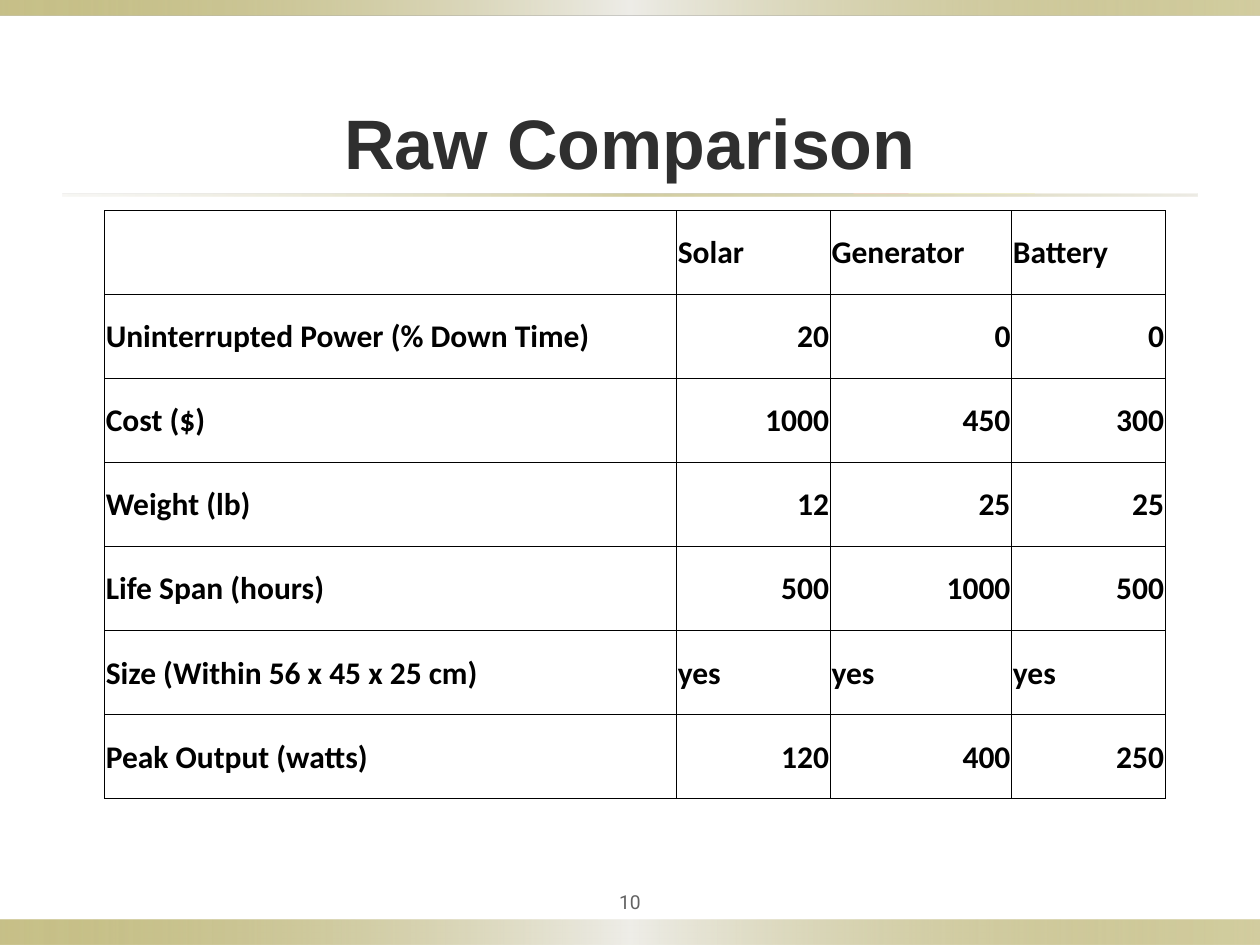
import lxml.etree
import pptx
import pptx.dml.color
import pptx.enum.shapes
import pptx.enum.text
import pptx.oxml.ns
import pptx.util

RGBColor = pptx.dml.color.RGBColor
ALIGN = pptx.enum.text.PP_ALIGN
ANCHOR = pptx.enum.text.MSO_ANCHOR
qn = pptx.oxml.ns.qn

OLIVE = RGBColor(0x91, 0x84, 0x15)
PEARL = RGBColor(0xEE, 0xED, 0xE8)
SAND = RGBColor(0xDC, 0xD9, 0xCC)
CHARCOAL = RGBColor(0x2F, 0x2F, 0x2F)
GREY = RGBColor(0x63, 0x63, 0x63)
BLACK = RGBColor(0, 0, 0)

UNIT = pptx.util.Inches(0.1)
GRID_COLUMNS, GRID_ROWS = 100, 75

BAND_STOPS = [(0, OLIVE, 50), (50, PEARL, 100), (100, OLIVE, 40)]
RULE_STOPS = [(0, SAND, 20), (50, OLIVE, 40), (100, SAND, 50)]

TITLE_FONT = {"name": "Arial", "size": pptx.util.Pt(40), "bold": True}
NUMBER_FONT = {"name": "Roboto", "size": pptx.util.Pt(11), "bold": False}
CELL_FONT = {"name": "Calibri", "size": pptx.util.Pt(18), "bold": True}
CELL_FORMAT = {
    "vertical_anchor": ANCHOR.MIDDLE,
    "margin_left": pptx.util.Inches(0.01),
    "margin_right": pptx.util.Inches(0.01),
    "margin_top": pptx.util.Inches(0.01),
    "margin_bottom": 0,
}

COLUMN_WIDTHS = [45.4, 12.2, 14.4, 12.2]
COMPARISON = [
    ["", "Solar", "Generator", "Battery"],
    ["Uninterrupted Power (% Down Time)", "20", "0", "0"],
    ["Cost ($)", "1000", "450", "300"],
    ["Weight (lb)", "12", "25", "25"],
    ["Life Span (hours)", "500", "1000", "500"],
    ["Size (Within 56 x 45 x 25 cm)", "yes", "yes", "yes"],
    ["Peak Output (watts)", "120", "400", "250"],
]


def grid(*lengths):
    return [round(length * UNIT) for length in lengths]


def apply_format(target, values):
    for name, value in values.items():
        setattr(target, name, value)


def write(para, text, font, color, align):
    para.alignment = align
    span = para.add_run()
    span.text = text
    apply_format(span.font, font)
    span.font.color.rgb = color


def add_gradient_bar(page, box, stops):
    bar = page.shapes.add_shape(pptx.enum.shapes.MSO_SHAPE.RECTANGLE, *grid(*box))
    bar.shadow.inherit = False
    bar.line.fill.background()
    bar.fill.gradient()
    bar.fill.gradient_angle = 0
    stop_list = bar.element.spPr.find(".//" + qn("a:gsLst"))
    stop_list.clear()
    for position, color, opacity in stops:
        stop = lxml.etree.SubElement(stop_list, qn("a:gs"), pos=str(position * 1000))
        tint = lxml.etree.SubElement(stop, qn("a:srgbClr"), val=str(color))
        lxml.etree.SubElement(tint, qn("a:alpha"), val=str(opacity * 1000))


def add_label(page, box, text, font, color, anchor, margin):
    label = page.shapes.add_textbox(*grid(*box))
    frame = label.text_frame
    sides = ("left", "right", "top", "bottom")
    apply_format(frame, {f"margin_{side}": pptx.util.Inches(margin) for side in sides})
    apply_format(frame, {"word_wrap": True, "vertical_anchor": anchor})
    write(frame.paragraphs[0], text, font, color, ALIGN.CENTER)


def add_borders(cell):
    properties = cell._tc.get_or_add_tcPr()
    for index, side in enumerate(("a:lnL", "a:lnR", "a:lnT", "a:lnB")):
        border = lxml.etree.Element(qn(side), w=str(pptx.util.Pt(0.5)))
        fill = lxml.etree.SubElement(border, qn("a:solidFill"))
        lxml.etree.SubElement(fill, qn("a:srgbClr"), val=str(BLACK))
        properties.insert(index, border)


def add_comparison_table(page, box):
    frame = page.shapes.add_table(len(COMPARISON), len(COLUMN_WIDTHS), *grid(*box))
    table = frame.table
    apply_format(table, {"first_row": False, "horz_banding": False})
    for column, width in zip(table.columns, grid(*COLUMN_WIDTHS)):
        column.width = width
    for row, texts in zip(table.rows, COMPARISON):
        row.height = grid(box[3] / len(COMPARISON))[0]
        for cell, text in zip(row.cells, texts):
            apply_format(cell, CELL_FORMAT)
            cell.fill.background()
            add_borders(cell)
            if text:
                align = ALIGN.RIGHT if text.isdigit() else ALIGN.LEFT
                write(cell.text_frame.paragraphs[0], text, CELL_FONT, BLACK, align)


def add_comparison_page(deck):
    page = deck.slides.add_slide(deck.slide_layouts[6])
    add_gradient_bar(page, (0, 73, GRID_COLUMNS, 2), BAND_STOPS)
    add_gradient_bar(page, (0, 0, GRID_COLUMNS, 1.2), BAND_STOPS)
    add_gradient_bar(page, (5, 15.4, 90, 0.2), RULE_STOPS)
    add_label(page, (5, 6.8, 90, 8.8), "Raw Comparison",
              TITLE_FONT, CHARCOAL, ANCHOR.BOTTOM, 0.1)
    add_label(page, (45, 70, 10, 3.1), "10",
              NUMBER_FONT, GREY, ANCHOR.MIDDLE, 0.05)
    add_comparison_table(page, (8.3, 16.7, sum(COLUMN_WIDTHS), 46.7))


def main():
    deck = pptx.Presentation()
    deck.slide_width, deck.slide_height = grid(GRID_COLUMNS, GRID_ROWS)
    add_comparison_page(deck)
    deck.save("out.pptx")


if __name__ == "__main__":
    main()
